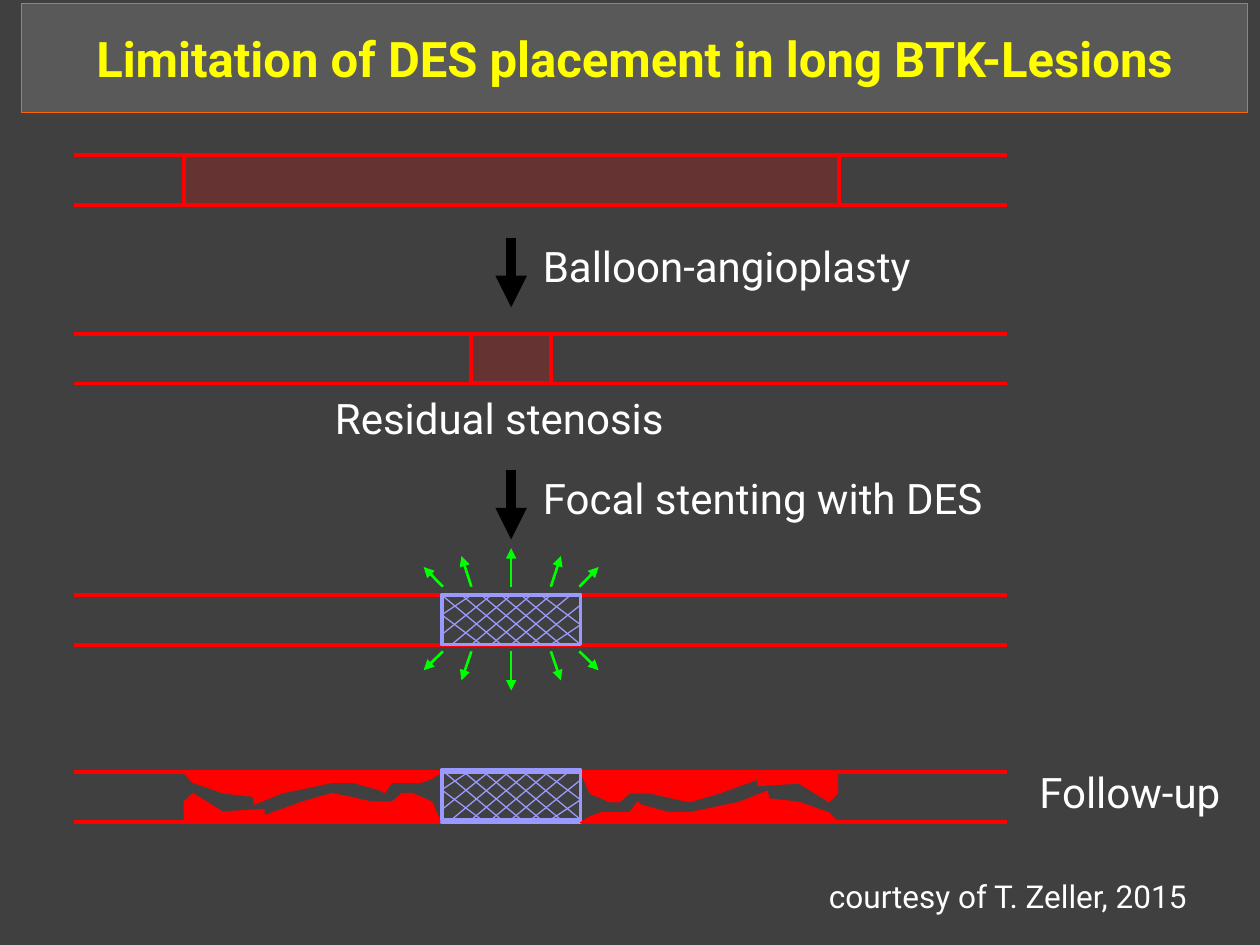
"""Build a slide on the limits of DES placement in long BTK lesions."""
import lxml.etree
import pptx
import pptx.dml.color
import pptx.enum.shapes
import pptx.enum.text
import pptx.oxml.ns
import pptx.util

Pt = pptx.util.Pt
RGBColor = pptx.dml.color.RGBColor
qn = pptx.oxml.ns.qn

BACKGROUND = RGBColor(0x40, 0x40, 0x40)
PANEL = RGBColor(0x59, 0x59, 0x59)
ORANGE = RGBColor(0xFF, 0x66, 0x00)
YELLOW = RGBColor(0xFF, 0xFF, 0x00)
WHITE = RGBColor(0xFF, 0xFF, 0xFF)
BLACK = RGBColor(0x00, 0x00, 0x00)
RED = RGBColor(0xFF, 0x00, 0x00)
GREEN = RGBColor(0x00, 0xFF, 0x00)
LILAC = RGBColor(0x99, 0x99, 0xFF)
FONT = "Roboto"

UNIT = 5.67
VESSEL_LEFT, VESSEL_RIGHT, VESSEL_HEIGHT = 42.5, 575.3, 5 * UNIT
VESSEL_TOPS = [88.6, 190.8, 340, 441.4]
STENT_LEFT, STENT_WIDTH = 252.4, 14 * UNIT
AXIS = 292.1

deck = pptx.Presentation()
deck.slide_width, deck.slide_height = Pt(720), Pt(540)
slide = deck.slides.add_slide(deck.slide_layouts[5])
slide.background.fill.solid()
slide.background.fill.fore_color.rgb = BACKGROUND


def draw_line(start, end, color, width, arrow=False):
    line = slide.shapes.add_connector(
        pptx.enum.shapes.MSO_CONNECTOR.STRAIGHT, *map(Pt, start + end))
    line.line.color.rgb = color
    line.line.width = Pt(width)
    if arrow:
        outline = line.line._get_or_add_ln()
        lxml.etree.SubElement(outline, qn("a:tailEnd"), type="triangle")
    lxml.etree.SubElement(line._element.spPr, qn("a:effectLst"))


def draw_box(left, top, width, color, opacity=0):
    box = slide.shapes.add_shape(
        pptx.enum.shapes.MSO_SHAPE.RECTANGLE,
        Pt(left), Pt(top), Pt(width), Pt(VESSEL_HEIGHT))
    box.shadow.inherit = False
    box.line.color.rgb = color
    box.line.width = Pt(2.25)
    if opacity:
        box.fill.solid()
        box.fill.fore_color.rgb = color
        fill_color = box._element.spPr.find(qn("a:solidFill"))[0]
        lxml.etree.SubElement(fill_color, qn("a:alpha"), val=str(opacity * 1000))
    else:
        box.fill.background()


title = slide.shapes.title
title.left, title.top, title.width, title.height = map(Pt, (12.2, 2, 700.6, 62.5))
title.fill.solid()
title.fill.fore_color.rgb = PANEL
title.line.color.rgb = ORANGE
title.line.width = Pt(0.75)
title.text_frame.text = "Limitation of DES placement in long BTK-Lesions"
title.text_frame.auto_size = pptx.enum.text.MSO_AUTO_SIZE.NONE
title.text_frame.vertical_anchor = pptx.enum.text.MSO_ANCHOR.MIDDLE
para = title.text_frame.paragraphs[0]
para.alignment = pptx.enum.text.PP_ALIGN.CENTER
font = para.runs[0].font
font.name, font.size, font.bold = FONT, Pt(28), True
font.color.rgb = YELLOW

for top in VESSEL_TOPS:
    for y in (top, top + VESSEL_HEIGHT):
        draw_line((VESSEL_LEFT, y), (VESSEL_RIGHT, y), RED, 2.25)

draw_box(105, VESSEL_TOPS[0], 374.4, RED, opacity=20)
draw_box(269.3, VESSEL_TOPS[1], 45.4, RED, opacity=20)
draw_box(STENT_LEFT, VESSEL_TOPS[3], STENT_WIDTH, LILAC)

for top in (136, 268.6):
    draw_line((AXIS, top), (AXIS, top + 39.6), BLACK, 6, arrow=True)

upper_plaque = [
    (105, 441.4), (252.2, 441.4), (246.2, 445), (240.5, 447), (224, 447),
    (219.6, 453), (217.4, 451.4), (201.6, 447), (190, 447), (161.3, 453),
    (145.4, 459.4), (144.7, 455), (127.4, 453), (110.2, 447)]
lower_plaque = [
    (105, 469.4), (252, 469.4), (247, 458), (235.4, 453), (229.7, 453),
    (224, 458), (212.4, 458), (190, 453), (172.8, 458), (151.2, 465.8),
    (151.2, 462.2), (127.4, 463.7), (110.2, 453), (105, 458)]
for outline, has_line in ((upper_plaque, True), (lower_plaque, False)):
    turned = [(583.9 - x, 911.5 - y) for x, y in outline]
    for points in (outline, turned):
        corners = [(Pt(x), Pt(y)) for x, y in points]
        builder = slide.shapes.build_freeform(*corners[0])
        builder.add_line_segments(corners[1:], close=True)
        plaque = builder.convert_to_shape()
        plaque.shadow.inherit = False
        plaque.fill.solid()
        plaque.fill.fore_color.rgb = RED
        if has_line:
            plaque.line.color.rgb = RED
            plaque.line.width = Pt(0.75)
        else:
            plaque.line.fill.background()

mesh = [
    ((0, 4), (5, 0)), ((0, 2), (3, 0)), ((9, 5), (14, 1)), ((11, 5), (14, 3)),
    ((4, 5), (0, 2)), ((14, 3), (10, 0))]
mesh += [((x, 5), (x + 6, 0)) for x in (1, 3, 5, 7)]
mesh += [((x, 5), (x - 6, 0)) for x in (6, 8, 10, 12, 14)]
for top in (VESSEL_TOPS[2], 440):
    draw_box(STENT_LEFT, top, STENT_WIDTH, LILAC)
    for wire in mesh:
        start, end = [(STENT_LEFT + x * UNIT, top + y * UNIT) for x, y in wire]
        draw_line(start, end, LILAC, 0.75)

for near, far, upper_tip, lower_tip in (
        (-39, -50, 324, 383), (-22.7, -28.4, 317.7, 388.8), (0, 0, 313.2, 394.6),
        (22.7, 28.4, 317.7, 388.8), (39, 50, 324, 383)):
    for base, tip in ((335.3, upper_tip), (372.2, lower_tip)):
        draw_line((AXIS + near, base), (AXIS + far, tip), GREEN, 1.5, arrow=True)

for text, left, top, width, height, size in (
        ("Balloon-angioplasty", 303.1, 133.9, 402.5, 36, 24),
        ("Residual stenosis", 184.3, 221, 215.3, 36, 24),
        ("Focal stenting with DES", 303.1, 266.4, 289.4, 36, 24),
        ("Follow-up", 586.8, 434.2, 130.3, 36, 24),
        ("courtesy of T. Zeller, 2015", 466.6, 497.5, 239, 29, 18)):
    label = slide.shapes.add_textbox(*map(Pt, (left, top, width, height)))
    label.text_frame.word_wrap = True
    label.text_frame.text = text
    font = label.text_frame.paragraphs[0].runs[0].font
    font.name, font.size = FONT, Pt(size)
    font.color.rgb = WHITE

deck.save("out.pptx")
